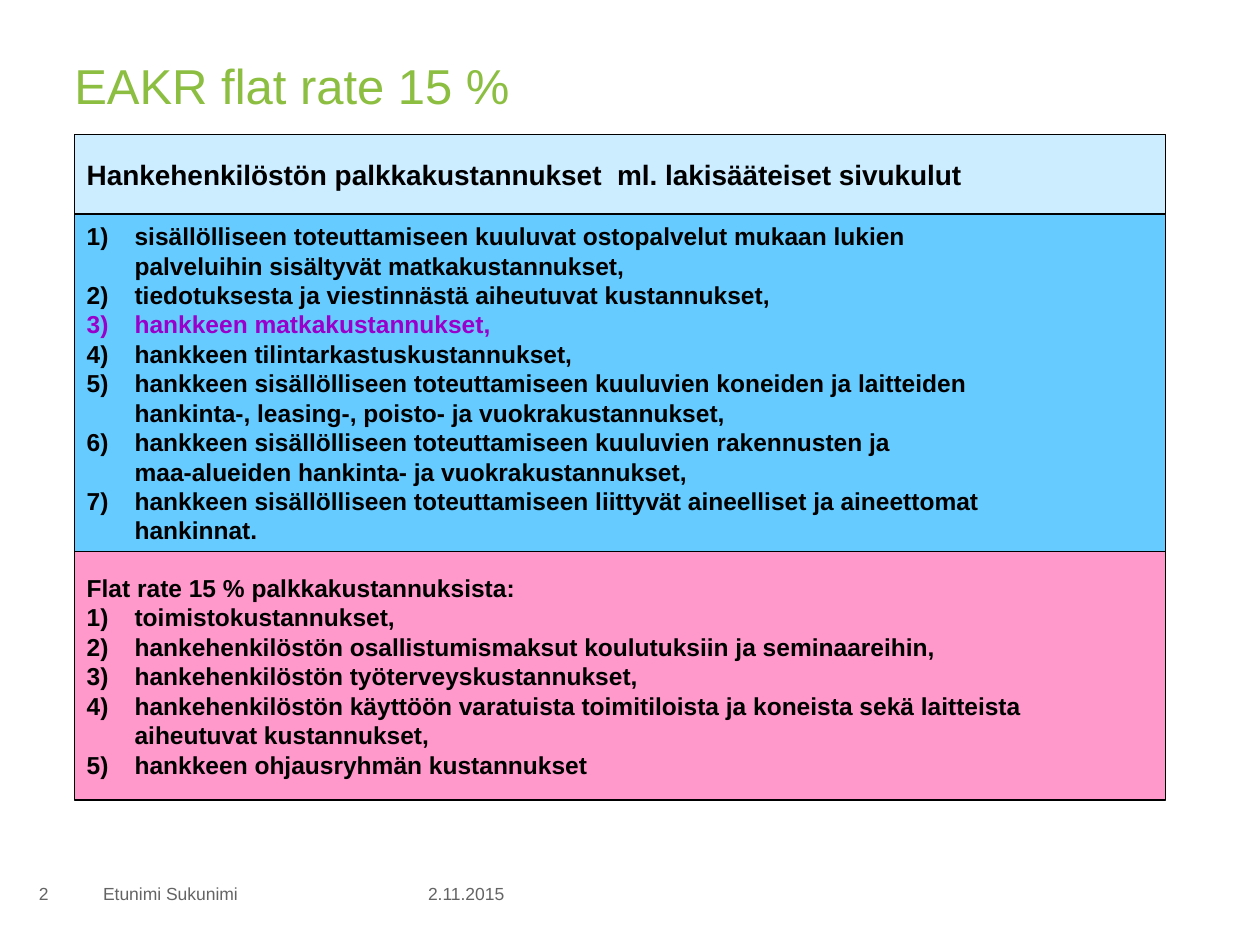
from dataclasses import dataclass

from lxml import etree
from pptx import Presentation
from pptx import util as u
from pptx.dml.color import RGBColor
from pptx.enum import shapes, text
from pptx.oxml.ns import qn


@dataclass(frozen=True)
class Theme:
    font: str = "Arial"
    title_size: int = 28
    heading_size: int = 16
    body_size: int = 14
    footer_size: int = 10
    green: str = "8CBE41"
    grey: str = "646464"
    black: str = "000000"
    purple: str = "9900CC"
    pale_blue: str = "CCECFF"
    blue: str = "66CCFF"
    pink: str = "FF99CC"


THEME = Theme()
LEFT = 0.59
BAND_TOP = 1.07
BAND_WIDTH = 8.66
FOOTER_TOP, FOOTER_HEIGHT = 6.9, 0.39
NUMBER_INDENT = u.Inches(0.38)

DIRECT_COSTS = [
    "sisällölliseen toteuttamiseen kuuluvat ostopalvelut mukaan lukien\n"
    "palveluihin sisältyvät matkakustannukset,",
    "tiedotuksesta ja viestinnästä aiheutuvat kustannukset,",
    "hankkeen matkakustannukset,",
    "hankkeen tilintarkastuskustannukset,",
    "hankkeen sisällölliseen toteuttamiseen kuuluvien koneiden ja laitteiden\n"
    "hankinta-, leasing-, poisto- ja vuokrakustannukset,",
    "hankkeen sisällölliseen toteuttamiseen kuuluvien rakennusten ja\n"
    "maa-alueiden hankinta- ja vuokrakustannukset,",
    "hankkeen sisällölliseen toteuttamiseen liittyvät aineelliset ja aineettomat\n"
    "hankinnat.",
]
TRAVEL_COSTS = DIRECT_COSTS[2]
FLAT_RATE_COSTS = [
    "toimistokustannukset,",
    "hankehenkilöstön osallistumismaksut koulutuksiin ja seminaareihin,",
    "hankehenkilöstön työterveyskustannukset,",
    "hankehenkilöstön käyttöön varatuista toimitiloista ja koneista sekä laitteista\n"
    "aiheutuvat kustannukset,",
    "hankkeen ohjausryhmän kustannukset",
]


def add_text(paragraph, wording, size, color, bold=False):
    """Add one run per line, with line breaks between them."""
    for index, line in enumerate(wording.split("\n")):
        if index:
            paragraph.add_line_break()
        run = paragraph.add_run()
        run.text = line
        run.font.name = THEME.font
        run.font.size = u.Pt(size)
        run.font.bold = bold
        run.font.color.rgb = RGBColor.from_string(color)


def next_paragraph(frame):
    """Return the empty first paragraph, or a new one after the others."""
    first = frame.paragraphs[0]
    paragraph = frame.add_paragraph() if first.runs else first
    paragraph.alignment = text.PP_ALIGN.LEFT
    return paragraph


def number_paragraph(paragraph):
    properties = paragraph._p.get_or_add_pPr()
    properties.set("marL", str(NUMBER_INDENT))
    properties.set("indent", str(-NUMBER_INDENT))
    etree.SubElement(properties, qn("a:buFont"), typeface="+mj-lt")
    etree.SubElement(properties, qn("a:buAutoNum"), type="arabicParenR")


def add_title(slide, wording):
    title = slide.shapes.title
    title.left, title.top = u.Inches(LEFT), u.Inches(0.44)
    title.width, title.height = u.Inches(10 - 2 * LEFT), u.Inches(0.98)
    frame = title.text_frame
    frame.margin_left = frame.margin_right = 0
    frame.margin_top = frame.margin_bottom = 0
    frame.vertical_anchor = text.MSO_ANCHOR.TOP
    frame.auto_size = text.MSO_AUTO_SIZE.NONE
    add_text(next_paragraph(frame), wording, THEME.title_size, THEME.green)


def add_band(slide, top, height, fill, heading="", heading_size=THEME.body_size, items=()):
    """Add a full-width box with an optional heading and numbered items."""
    band = slide.shapes.add_shape(
        shapes.MSO_SHAPE.RECTANGLE,
        u.Inches(LEFT), u.Inches(top), u.Inches(BAND_WIDTH), u.Inches(height))
    band.shadow.inherit = False
    band.fill.solid()
    band.fill.fore_color.rgb = RGBColor.from_string(fill)
    band.line.color.rgb = RGBColor.from_string(THEME.black)
    band.line.width = u.Pt(0.75)
    frame = band.text_frame
    frame.word_wrap = True
    frame.vertical_anchor = text.MSO_ANCHOR.MIDDLE
    if heading:
        add_text(next_paragraph(frame), heading, heading_size, THEME.black, bold=True)
    for item in items:
        paragraph = next_paragraph(frame)
        number_paragraph(paragraph)
        color = THEME.purple if item == TRAVEL_COSTS else THEME.black
        add_text(paragraph, item, THEME.body_size, color, bold=True)


def add_footer(slide, left, width, wording, alignment=text.PP_ALIGN.LEFT):
    box = slide.shapes.add_textbox(
        u.Inches(left), u.Inches(FOOTER_TOP), u.Inches(width), u.Inches(FOOTER_HEIGHT))
    frame = box.text_frame
    frame.word_wrap = True
    frame.vertical_anchor = text.MSO_ANCHOR.MIDDLE
    paragraph = next_paragraph(frame)
    paragraph.alignment = alignment
    add_text(paragraph, wording, THEME.footer_size, THEME.grey)


def main():
    presentation = Presentation()
    presentation.slide_width, presentation.slide_height = u.Inches(10), u.Inches(7.5)
    slide = presentation.slides.add_slide(presentation.slide_layouts[5])
    add_title(slide, "EAKR flat rate 15 %")

    bands = [
        (0.63, THEME.pale_blue,
         "Hankehenkilöstön palkkakustannukset  ml. lakisääteiset sivukulut",
         THEME.heading_size, ()),
        (2.68, THEME.blue, "", THEME.body_size, DIRECT_COSTS),
        (1.97, THEME.pink, "Flat rate 15 % palkkakustannuksista:",
         THEME.body_size, FLAT_RATE_COSTS),
    ]
    top = BAND_TOP
    for height, *content in bands:
        add_band(slide, top, height, *content)
        top += height

    add_footer(slide, 0.21, 0.47, "2")
    add_footer(slide, 0.72, 2.17, "Etunimi Sukunimi")
    add_footer(slide, 2.92, 1.18, "2.11.2015", text.PP_ALIGN.RIGHT)
    presentation.save("out.pptx")


if __name__ == "__main__":
    main()
